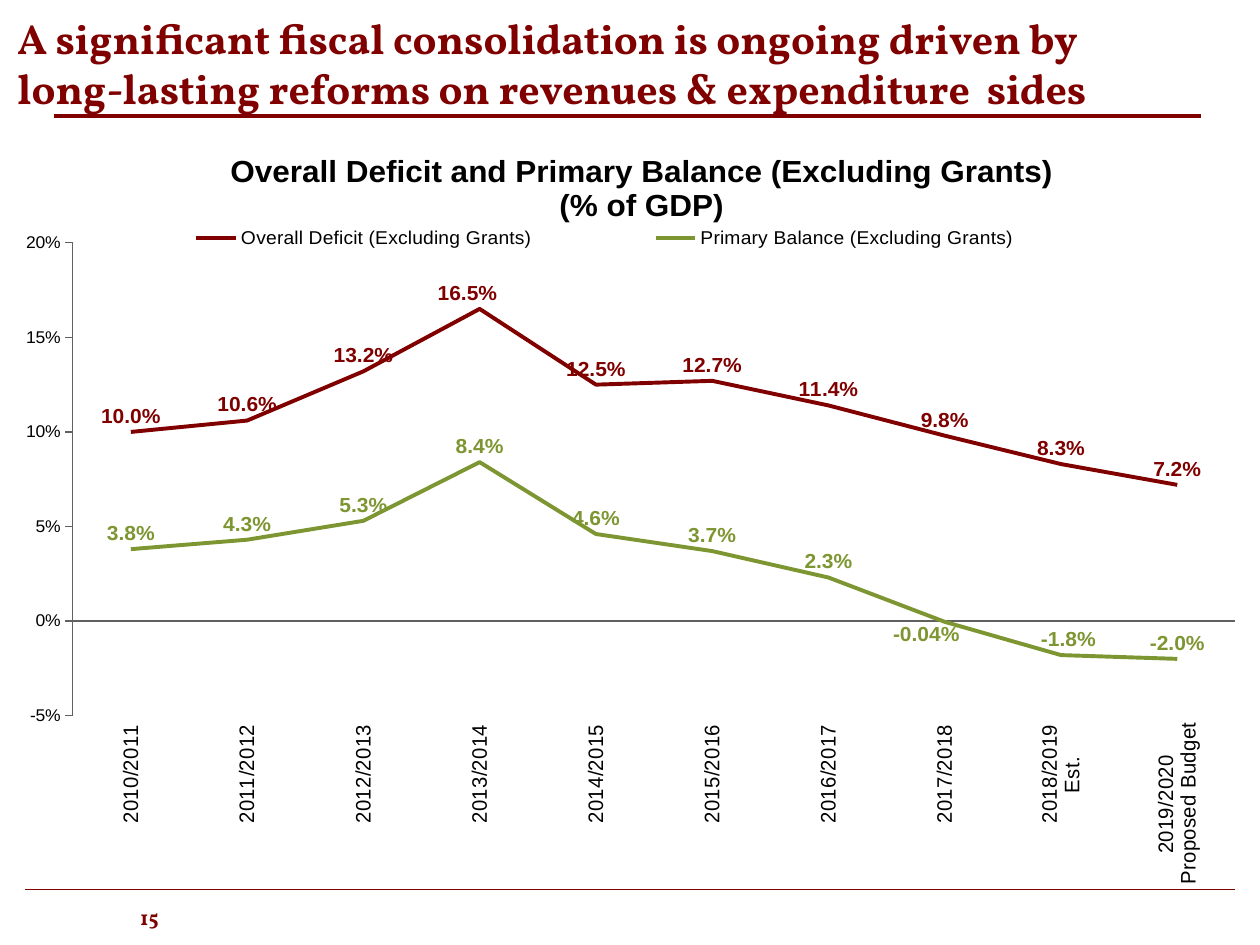
import pptx
import pptx.chart.data
import pptx.dml.color
import pptx.enum.chart
import pptx.enum.shapes
import pptx.enum.text
import pptx.oxml
import pptx.oxml.ns
import pptx.util

RED = pptx.dml.color.RGBColor(0x80, 0x00, 0x00)
GREEN = pptx.dml.color.RGBColor(0x7E, 0x96, 0x32)
BLACK = pptx.dml.color.RGBColor(0x00, 0x00, 0x00)
GREY = pptx.dml.color.RGBColor(0x60, 0x60, 0x60)
COLS, ROWS = 100, 75
YEARS = [f"{year}/{year + 1}" for year in range(2010, 2020)]
YEARS[8] += "\nEst."
YEARS[9] += "\nProposed Budget"
DEFICIT = [0.1, 0.106, 0.132, 0.165, 0.125, 0.127, 0.114, 0.098, 0.083, 0.072]
PRIMARY = [0.038, 0.043, 0.053, 0.084, 0.046, 0.037, 0.023, -0.0004, -0.018, -0.02]
LINES = [
    ("Overall Deficit (Excluding Grants)", DEFICIT, RED,
     {3: (-0.01, 0, "0.0%")}),
    ("Primary Balance (Excluding Grants)", PRIMARY, GREEN,
     {7: (-0.015, 0.04, "0.00%"), 8: (0.006, 0, "0.0%")}),
]
ALIGN = pptx.enum.text.PP_ALIGN
ANCHOR = pptx.enum.text.MSO_ANCHOR


class Deck:
    """Holds the style and the current slide, measured in grid columns and rows."""

    def __init__(self):
        self.show = pptx.Presentation()
        self.show.slide_width = pptx.util.Inches(10)
        self.show.slide_height = pptx.util.Inches(7.5)
        self.slide = self.show.slides.add_slide(self.show.slide_layouts[6])
        self.serif, self.sans = "Vollkorn", "Arial"

    def spot(self, col, row):
        return (int(self.show.slide_width * col / COLS),
                int(self.show.slide_height * row / ROWS))

    def style(self, font, size, color, bold=False, face=None):
        font.name = face or self.sans
        font.size = pptx.util.Pt(size)
        font.color.rgb = color
        font.bold = bold

    def rule(self, left, right, row, width):
        line = self.slide.shapes.add_connector(
            pptx.enum.shapes.MSO_CONNECTOR.STRAIGHT,
            *self.spot(left, row), *self.spot(right, row))
        line.line.color.rgb = RED
        line.line.width = pptx.util.Pt(width)
        props = line.element.xpath("p:spPr")[0]
        props.append(pptx.oxml.parse_xml(
            f"<a:effectLst {pptx.oxml.ns.nsdecls('a')}/>"))

    def text(self, box, words, size, align, anchor, inset=None):
        frame = self.slide.shapes.add_textbox(
            *self.spot(*box[:2]), *self.spot(*box[2:])).text_frame
        frame.word_wrap = True
        frame.vertical_anchor = anchor
        if inset is not None:
            frame.margin_left = frame.margin_right = inset
            frame.margin_top = frame.margin_bottom = inset
        frame.text = words
        for para in frame.paragraphs:
            para.alignment = align
            for run in para.runs:
                self.style(run.font, size, RED, True, self.serif)

    def place(self, node, index, inner=False, **sides):
        for old in node.xpath("c:layout"):
            node.remove(old)
        modes = "".join(f'<c:{side}Mode val="edge"/>' for side in "xy"
                        if node.tag.rpartition("}")[2] != "dLbl")
        sizes = "".join(f'<c:{side} val="{share}"/>' for side, share in sides.items())
        target = '<c:layoutTarget val="inner"/>' if inner else ""
        node.insert(index, pptx.oxml.parse_xml(
            f"<c:layout {pptx.oxml.ns.nsdecls('c')}><c:manualLayout>"
            f"{target}{modes}{sizes}</c:manualLayout></c:layout>"))

    def chart(self, box, title, cats, lines):
        data = pptx.chart.data.CategoryChartData(number_format="0.0%")
        data.categories = cats
        for name, vals, *_ in lines:
            data.add_series(name, vals)
        chart = self.slide.shapes.add_chart(
            pptx.enum.chart.XL_CHART_TYPE.LINE,
            *self.spot(*box[:2]), *self.spot(*box[2:]), data).chart
        self.style(chart.font, 10, BLACK)
        self.head(chart, title)
        self.axes(chart)
        chart.plots[0].vary_by_categories = False
        for series, (_, _, color, moved) in zip(chart.plots[0].series, lines):
            self.line(chart, series, color, moved)
        self.place(chart.element.xpath("c:chart/c:plotArea")[0], 0, True,
                   x=0.055, y=0.137, w=0.945, h=0.662)

    def head(self, chart, title):
        chart.has_title = True
        frame = chart.chart_title.text_frame
        frame.text = title
        for para in frame.paragraphs:
            for run in para.runs:
                self.style(run.font, 18, BLACK, True)
        self.place(chart.element.xpath("c:chart/c:title")[0], 1, x=0.18, y=0.005)
        chart.has_legend = True
        chart.legend.position = pptx.enum.chart.XL_LEGEND_POSITION.TOP
        chart.legend.include_in_layout = False
        self.style(chart.legend.font, 11, BLACK)
        self.place(chart.element.xpath("c:chart/c:legend")[0], 1,
                   x=0.06, y=0.11, w=0.855, h=0.04)

    def axes(self, chart):
        mark = pptx.enum.chart.XL_TICK_MARK
        cat, val = chart.category_axis, chart.value_axis
        for axis, size, tick in ((cat, 12, mark.NONE), (val, 10, mark.OUTSIDE)):
            axis.has_major_gridlines = False
            axis.major_tick_mark = tick
            axis.minor_tick_mark = mark.NONE
            axis.format.line.color.rgb = GREY
            axis.format.line.width = pptx.util.Pt(0.75)
            self.style(axis.tick_labels.font, size, BLACK)
        cat.tick_label_position = pptx.enum.chart.XL_TICK_LABEL_POSITION.LOW
        chart.element.xpath(".//c:catAx/c:txPr/a:bodyPr")[0].set("rot", "-5400000")
        val.minimum_scale, val.maximum_scale, val.major_unit = -0.05, 0.2, 0.05
        val.tick_labels.number_format = "0%"
        val.tick_labels.number_format_is_linked = False

    def line(self, chart, series, color, moved):
        above = pptx.enum.chart.XL_LABEL_POSITION.ABOVE
        series.smooth = False
        series.marker.style = pptx.enum.chart.XL_MARKER_STYLE.NONE
        series.format.line.color.rgb = color
        series.format.line.width = pptx.util.Pt(2.25)
        labels = series.data_labels
        labels.show_value = True
        labels.number_format = "0.0%"
        labels.number_format_is_linked = False
        labels.position = above
        self.style(labels.font, 12, color, True)
        for spot, (right, down, form) in moved.items():
            label = series.points[spot].data_label
            self.style(label.font, 12, color, True)
            label.position = above
            node = chart.element.xpath(
                f".//c:ser[c:tx//c:v='{series.name}']"
                f"/c:dLbls/c:dLbl[c:idx/@val='{spot}']")[0]
            self.place(node, 1, x=right, y=down)
            node.insert(2, pptx.oxml.parse_xml(
                f"<c:numFmt {pptx.oxml.ns.nsdecls('c')} "
                f'formatCode="{form}" sourceLinked="0"/>'))


def main():
    deck = Deck()
    deck.rule(4.3, 95.3, 9.2, 2)
    deck.rule(2, 98, 70.6, 0.75)
    deck.text((4.3, 71.4, 8.3, 2.4), "15", 12, ALIGN.RIGHT, ANCHOR.BOTTOM, 0)
    deck.text((0.4, 0.5, 100.8, 9.1),
              "A significant fiscal consolidation is ongoing driven by \n"
              "long-lasting reforms on revenues & expenditure  sides",
              24, ALIGN.JUSTIFY, ANCHOR.TOP)
    deck.chart((0.4, 11.5, 97.7, 58.7),
               "Overall Deficit and Primary Balance (Excluding Grants)\n(% of GDP)",
               YEARS, LINES)
    deck.show.save("out.pptx")


if __name__ == "__main__":
    main()
